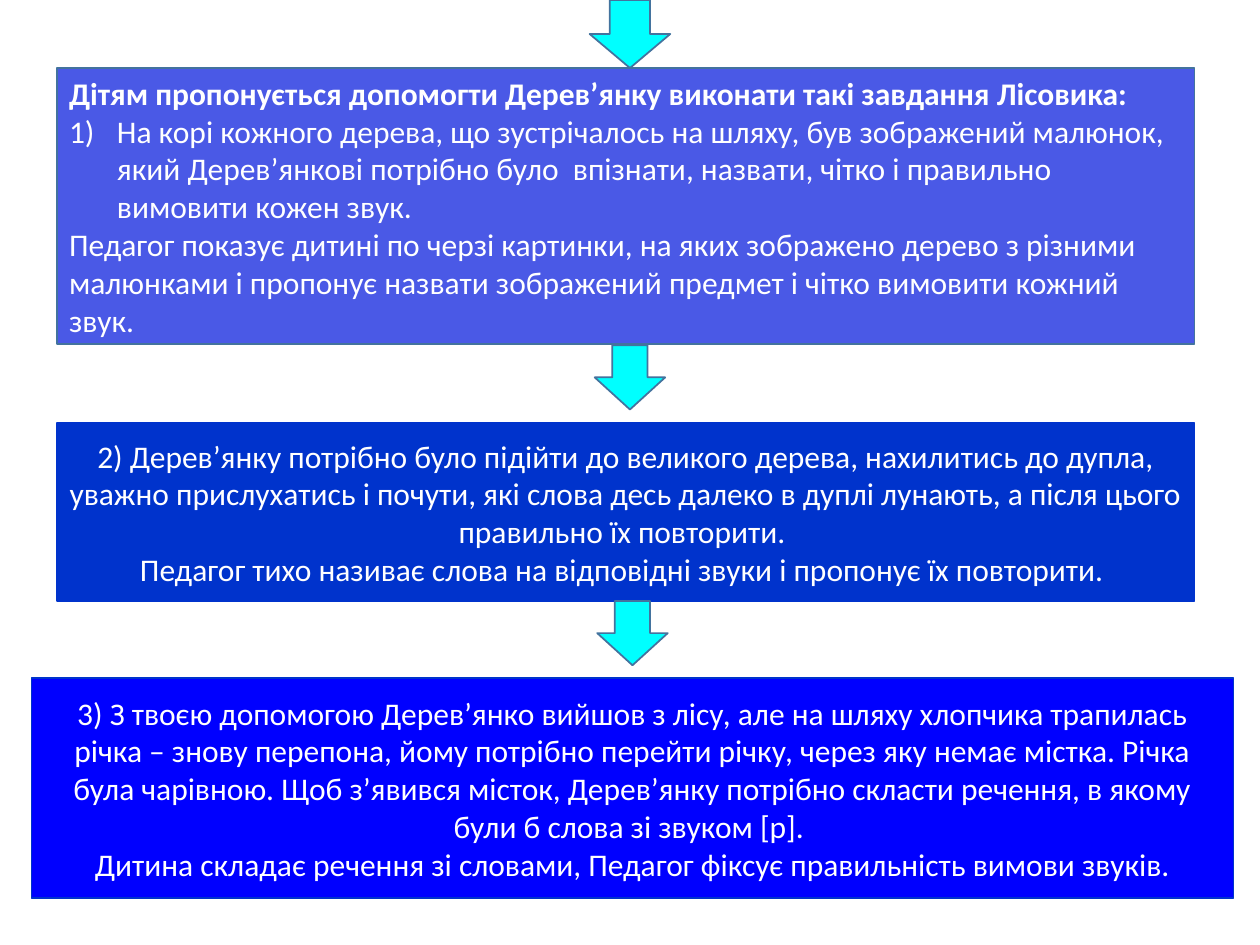
from lxml.etree import SubElement
from pptx import Presentation
from pptx.dml.color import RGBColor as Rgb
from pptx.enum.shapes import MSO_SHAPE as Shape
from pptx.enum.text import MSO_ANCHOR as Anchor, PP_ALIGN as Align
from pptx.oxml.ns import qn
from pptx.util import Inches, Pt

WIDTH, HEIGHT = Inches(10), Inches(7.5)
COLUMNS, ROWS = 100, 75
COLORS = {
    "first": "4A59E6",
    "second": "0033CC",
    "third": "0000FF",
    "arrow": "00FFFF",
    "outline": "43739E",
    "text": "FFFFFF",
}
FIRST_TASK = [
    "Дітям пропонується допомогти Дерев’янку виконати такі завдання Лісовика:",
    "На корі кожного дерева, що зустрічалось на шляху, був зображений малюнок, "
    "який Дерев’янкові потрібно було  впізнати, назвати, чітко і правильно "
    "вимовити кожен звук.",
    "Педагог показує дитині по черзі картинки, на яких зображено дерево з різними "
    "малюнками і пропонує назвати зображений предмет і чітко вимовити кожний звук.",
]
SECOND_TASK = [
    "2) Дерев’янку потрібно було підійти до великого дерева, нахилитись до дупла, "
    "уважно прислухатись і почути, які слова десь далеко в дуплі лунають, а після "
    "цього правильно їх повторити. ",
    "Педагог тихо називає слова на відповідні звуки і пропонує їх повторити. ",
]
THIRD_TASK = [
    "3) З твоєю допомогою Дерев’янко вийшов з лісу, але на шляху хлопчика трапилась "
    "річка – знову перепона, йому потрібно перейти річку, через яку немає містка. "
    "Річка була чарівною. Щоб з’явився місток, Дерев’янку потрібно скласти речення, "
    "в якому були б слова зі звуком [р]. ",
    "Дитина складає речення зі словами, Педагог фіксує правильність вимови звуків.",
]


def add_block(slide, preset, cells, fill, outline):
    """Draw a filled preset shape placed by column, row, column span and row span."""
    column, row, column_span, row_span = cells
    block = slide.shapes.add_shape(
        preset,
        int(WIDTH * column / COLUMNS),
        int(HEIGHT * row / ROWS),
        int(WIDTH * column_span / COLUMNS),
        int(HEIGHT * row_span / ROWS),
    )
    block.shadow.inherit = False
    block.fill.solid()
    block.fill.fore_color.rgb = Rgb.from_string(COLORS[fill])
    block.line.color.rgb = Rgb.from_string(COLORS[outline])
    block.line.width = Pt(1)
    return block


def add_task(slide, cells, wording, fill, outline, align=Align.CENTER):
    """Draw a task box and return its paragraphs."""
    frame = add_block(slide, Shape.RECTANGLE, cells, fill, outline).text_frame
    frame.word_wrap = True
    frame.vertical_anchor = Anchor.MIDDLE
    frame.text = "\n".join(wording)
    for paragraph in frame.paragraphs:
        paragraph.alignment = align
        for run in paragraph.runs:
            run.font.name = "Calibri"
            run.font.size = Pt(18)
            run.font.color.rgb = Rgb.from_string(COLORS["text"])
    return frame.paragraphs


def number_paragraph(paragraph, indent):
    """Give a paragraph a hanging automatic number such as 1)."""
    properties = paragraph._p.get_or_add_pPr()
    properties.set("marL", str(indent))
    properties.set("indent", str(-indent))
    SubElement(properties, qn("a:buFont"), typeface="+mj-lt")
    SubElement(properties, qn("a:buAutoNum"), type="arabicParenR")


def add_arrow(slide, cells):
    """Draw a down arrow that leads to the next task."""
    add_block(slide, Shape.DOWN_ARROW, cells, "arrow", "outline")


def main():
    """Build the slide with three tasks and the arrows between them."""
    deck = Presentation()
    deck.slide_width, deck.slide_height = WIDTH, HEIGHT
    slide = deck.slides.add_slide(deck.slide_layouts[6])

    heading, numbered, _ = add_task(
        slide, (4.5, 5.4, 90.3, 21.9), FIRST_TASK, "first", "outline", Align.LEFT
    )
    heading.runs[0].font.bold = True
    number_paragraph(numbered, Inches(0.38))
    add_task(slide, (4.5, 33.6, 90.3, 14.1), SECOND_TASK, "second", "second")
    add_task(slide, (2.5, 53.8, 95.4, 17.5), THIRD_TASK, "third", "second")

    for cells in (
        (46.8, 0, 6.4, 5.4),
        (47.2, 27.4, 5.6, 5.1),
        (47.4, 47.7, 5.6, 5.1),
    ):
        add_arrow(slide, cells)

    deck.save("out.pptx")


if __name__ == "__main__":
    main()
